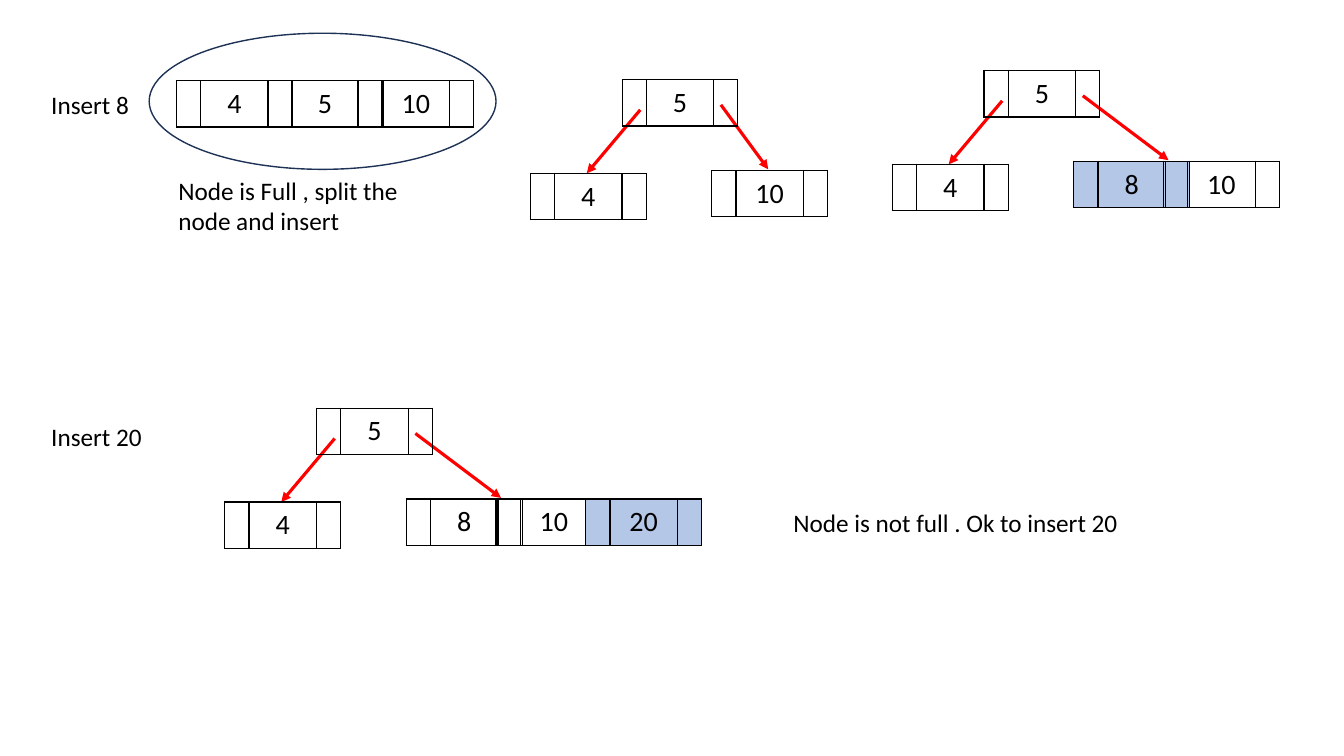
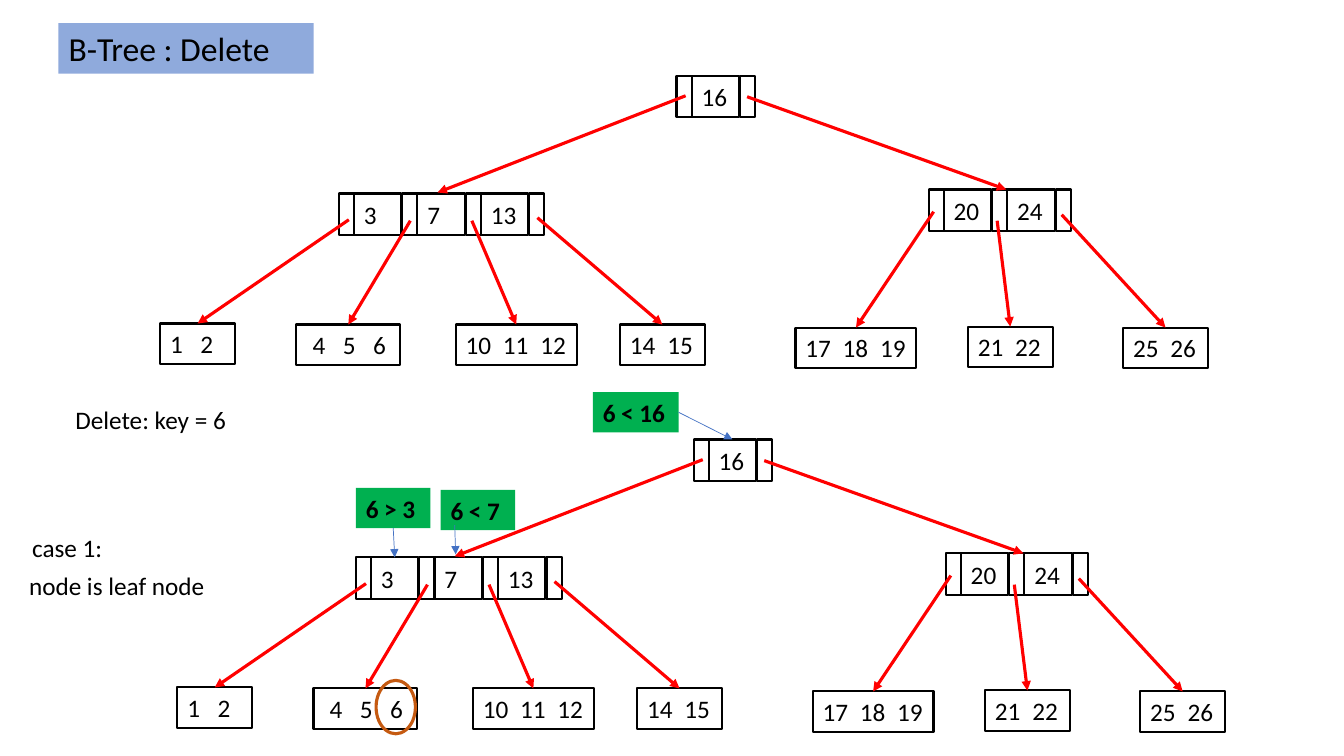
from pptx import Presentation
from pptx.dml.color import RGBColor
from pptx.enum.shapes import MSO_CONNECTOR, MSO_SHAPE
from pptx.enum.text import MSO_ANCHOR, MSO_AUTO_SIZE, PP_ALIGN
from pptx.oxml.ns import qn
from pptx.util import Pt
from lxml.etree import SubElement

FONT = "Calibri"
BLACK = RGBColor(0x00, 0x00, 0x00)
RED = RGBColor(0xFF, 0x00, 0x00)
BLUE = RGBColor(0x44, 0x72, 0xC4)
NAVY = RGBColor(0x1E, 0x32, 0x56)
ORANGE = RGBColor(0xC5, 0x5A, 0x11)
GREEN = RGBColor(0x00, 0xB0, 0x50)
TITLE_BLUE = RGBColor(0x8F, 0xAA, 0xDC)
NEW_KEY = RGBColor(0xB4, 0xC7, 0xE7)

SCALE = 9144  # EMU in one px, 100 px to the inch
TITLE_ONLY, BLANK = 5, 6
TOP, BOTTOM, RIGHT = 0, 2, 3

# Insert slide: key cells of a table node
CELL_WIDTHS = (23, 67, 23)
CELL_H = 46

# Delete slide: key and pointer boxes of an inner node
POINTER_W, KEY_W, NODE_H = 15, 47, 41
KEY_PITCH = 63
LEAF_H = 40
ROOT = (512, 0, [16])
# x, y, keys, arrow from root, arrow tip, arrow starts, leaves (x, y, width, keys)
SUBTREES = [
    (177, 117, [3, 7, 13], (521, 20), (275, 116),
     [(10, 26), (71, 27), (132, 27), (197, 24)],
     [(0, 246, 74, [1, 2]), (135, 247, 103, [4, 5, 6]),
      (293, 247, 120, [10, 11, 12]), (456, 247, 84, [14, 15])]),
    (762, 113, [20, 24], (582, 21), (839, 113),
     [(5, 22), (68, 31), (132, 25)],
     [(630, 250, 120, [17, 18, 19]), (801, 249, 84, [21, 22]),
      (955, 250, 84, [25, 26])]),
]


def px(*lengths):
    return [n * SCALE for n in lengths]


def format_text(tf, size=18, bold=False, align=PP_ALIGN.LEFT):
    for p in tf.paragraphs:
        p.alignment = align
        for r in p.runs:
            r.font.name = FONT
            r.font.size = Pt(size)
            r.font.bold = bold
            r.font.color.rgb = BLACK


def add_text(slide, x, y, w, h, text):
    tf = slide.shapes.add_textbox(*px(x, y, w, h)).text_frame
    tf.word_wrap = True
    tf.text = text
    format_text(tf)


def add_box(shapes, x, y, w, h, text="", kind=MSO_SHAPE.RECTANGLE,
            fill=None, line=BLACK, width=1.5, bold=False, inset=10):
    sp = shapes.add_shape(kind, *px(x, y, w, h))
    sp.shadow.inherit = False
    if fill is None:
        sp.fill.background()
    else:
        sp.fill.solid()
        sp.fill.fore_color.rgb = fill
    if line is None:
        sp.line.fill.background()
    else:
        sp.line.color.rgb = line
        sp.line.width = Pt(width)
    if text:
        tf = sp.text_frame
        tf.margin_left, tf.margin_right = px(inset, 0)
        tf.text = text
        format_text(tf, bold=bold)
    return sp


def add_arrow(shapes, start, end, color=RED, width=2.25):
    cxn = shapes.add_connector(MSO_CONNECTOR.STRAIGHT, *px(*start, *end))
    cxn.line.color.rgb = color
    cxn.line.width = Pt(width)
    SubElement(cxn.line._get_or_add_ln(), qn("a:tailEnd"), type="triangle")
    SubElement(cxn._element.spPr, qn("a:effectLst"))
    return cxn


def set_borders(cell):
    tc_pr = cell._tc.get_or_add_tcPr()
    for i, side in enumerate(("lnL", "lnR", "lnT", "lnB")):
        ln = SubElement(tc_pr, qn("a:" + side), w=str(Pt(1)))
        tc_pr.insert(i, ln)
        SubElement(SubElement(ln, qn("a:solidFill")), qn("a:srgbClr"), val=str(BLACK))


def add_key_table(slide, x, y, key, is_new=False):
    frame = slide.shapes.add_table(1, 3, *px(x, y, sum(CELL_WIDTHS), CELL_H))
    table = frame.table
    table.first_row = table.horz_banding = False
    table.cell(0, 1).text = str(key)
    for column, width in zip(table.columns, CELL_WIDTHS):
        column.width = width * SCALE
    for cell in table.iter_cells():
        cell.vertical_anchor = MSO_ANCHOR.MIDDLE
        format_text(cell.text_frame, 20, align=PP_ALIGN.CENTER)
        if is_new:
            cell.fill.solid()
            cell.fill.fore_color.rgb = NEW_KEY
        else:
            cell.fill.background()
        set_borders(cell)


def add_key_row(slide, x, y, keys, new_key=None, pitch=89):
    for i, key in enumerate(keys):
        add_key_table(slide, x + i * pitch, y, key, key == new_key)


def add_split_tree(slide, x, y, right_keys, right_tip, new_key=None):
    """Root 5 with leaf 4 on the left and the given leaf on the right."""
    add_arrow(slide.shapes, (x + 109, y + 30), (x + 56, y + 93))
    add_arrow(slide.shapes, (x + 189, y + 25), (x + right_tip, y + 89))
    add_key_table(slide, x, y + 93, 4)
    add_key_table(slide, x + 91, y, 5)
    add_key_row(slide, x + 180, y + 90, right_keys, new_key)


def add_inner_node(shapes, x, y, keys):
    boxes = {}
    for i, key in enumerate(keys):
        left = x + i * KEY_PITCH
        add_box(shapes, left, y, POINTER_W, NODE_H)
        boxes[key] = add_box(shapes, left + POINTER_W, y, KEY_W, NODE_H, str(key))
    add_box(shapes, x + len(keys) * KEY_PITCH, y, POINTER_W, NODE_H)
    return boxes


def add_leaf(shapes, x, y, w, keys):
    inset = 16 if keys[0] == 4 else 10
    sp = add_box(shapes, x, y, w, LEAF_H, "\t".join(map(str, keys)), inset=inset)
    # Tab stops spread the keys evenly
    step = 37 if keys[0] > 9 else 30
    p_pr = sp.text_frame.paragraphs[0]._p.get_or_add_pPr()
    tabs = SubElement(p_pr, qn("a:tabLst"))
    for i in range(1, len(keys)):
        SubElement(tabs, qn("a:tab"), pos=str(i * step * SCALE), algn="l")
    return sp


def add_b_tree(slide, x, y):
    """Draws the whole tree from its top left corner; returns the key boxes."""
    shapes = slide.shapes.add_group_shape().shapes
    root_x, root_y, root_keys = ROOT
    boxes = add_inner_node(shapes, x + root_x, y + root_y, root_keys)
    for node_x, node_y, keys, start, tip, starts, leaves in SUBTREES:
        left, top = x + node_x, y + node_y
        boxes.update(add_inner_node(shapes, left, top, keys))
        add_arrow(shapes, (x + start[0], y + start[1]), (x + tip[0], y + tip[1]))
        for (dx, dy), (leaf_x, leaf_y, w, leaf_keys) in zip(starts, leaves):
            leaf = add_leaf(shapes, x + leaf_x, y + leaf_y, w, leaf_keys)
            cxn = add_arrow(shapes, (left + dx, top + dy),
                            (x + leaf_x + w // 2, y + leaf_y))
            cxn.end_connect(leaf, TOP)
    return boxes


def add_comparison(slide, x, y, w, text):
    return add_box(slide.shapes, x, y, w, 40, text, fill=GREEN, line=None, bold=True)


def join(slide, label, side, key_box):
    cxn = add_arrow(slide.shapes, (0, 0), (1, 1), BLUE, 0.5)
    cxn.begin_connect(label, side)
    cxn.end_connect(key_box, TOP)


def add_title(slide, text, x, y, w, h):
    sp = slide.shapes.title
    sp.left, sp.top, sp.width, sp.height = px(x, y, w, h)
    sp.fill.solid()
    sp.fill.fore_color.rgb = TITLE_BLUE
    tf = sp.text_frame
    tf.text = text
    tf.auto_size = MSO_AUTO_SIZE.NONE
    tf.vertical_anchor = MSO_ANCHOR.MIDDLE
    format_text(tf, 24)


def build_insert_slide(prs):
    slide = prs.slides.add_slide(prs.slide_layouts[BLANK])
    # Insert 8: full node, split, then insert
    add_text(slide, 41, 84, 118, 40, "Insert 8")
    add_key_row(slide, 175, 80, [4, 5, 10], pitch=90)
    add_box(slide.shapes, 148, 33, 344, 135, kind=MSO_SHAPE.OVAL, line=NAVY, width=1)
    add_text(slide, 167, 169, 258, 71, "Node is Full , split the node and insert")
    add_split_tree(slide, 526, 79, [10], 236)
    add_split_tree(slide, 885, 70, [8, 10], 274, new_key=8)
    # Insert 20: room left in the leaf
    add_text(slide, 41, 413, 118, 40, "Insert 20")
    add_split_tree(slide, 223, 405, [8, 10, 20], 274, new_key=20)
    add_text(slide, 777, 498, 375, 40, "Node is not full . Ok to insert 20")


def build_delete_slide(prs):
    slide = prs.slides.add_slide(prs.slide_layouts[TITLE_ONLY])
    add_title(slide, "B-Tree : Delete", 58, 23, 253, 50)
    # Tree before the search, and the tree being searched
    add_b_tree(slide, 159, 75)
    boxes = add_b_tree(slide, 176, 436)
    # Search path to key 6
    join(slide, add_comparison(slide, 588, 389, 85, "6 < 16"), RIGHT, boxes[16])
    join(slide, add_comparison(slide, 353, 484, 74, "6 > 3"), BOTTOM, boxes[3])
    add_comparison(slide, 437, 486, 74, "6 < 7")
    add_arrow(slide.shapes, (451, 521), (452, 550), BLUE, 0.5)
    add_box(slide.shapes, 373, 675, 39, 53, kind=MSO_SHAPE.OVAL,
            line=ORANGE, width=2.25)
    # Captions
    add_text(slide, 65, 396, 254, 40, "Delete: key = 6")
    add_text(slide, 22, 523, 97, 40, "case 1:")
    add_text(slide, 19, 561, 203, 40, "node is leaf node")


def main():
    prs = Presentation()
    prs.slide_width, prs.slide_height = px(1333, 750)
    build_insert_slide(prs)
    build_delete_slide(prs)
    prs.save("out.pptx")


if __name__ == "__main__":
    main()
